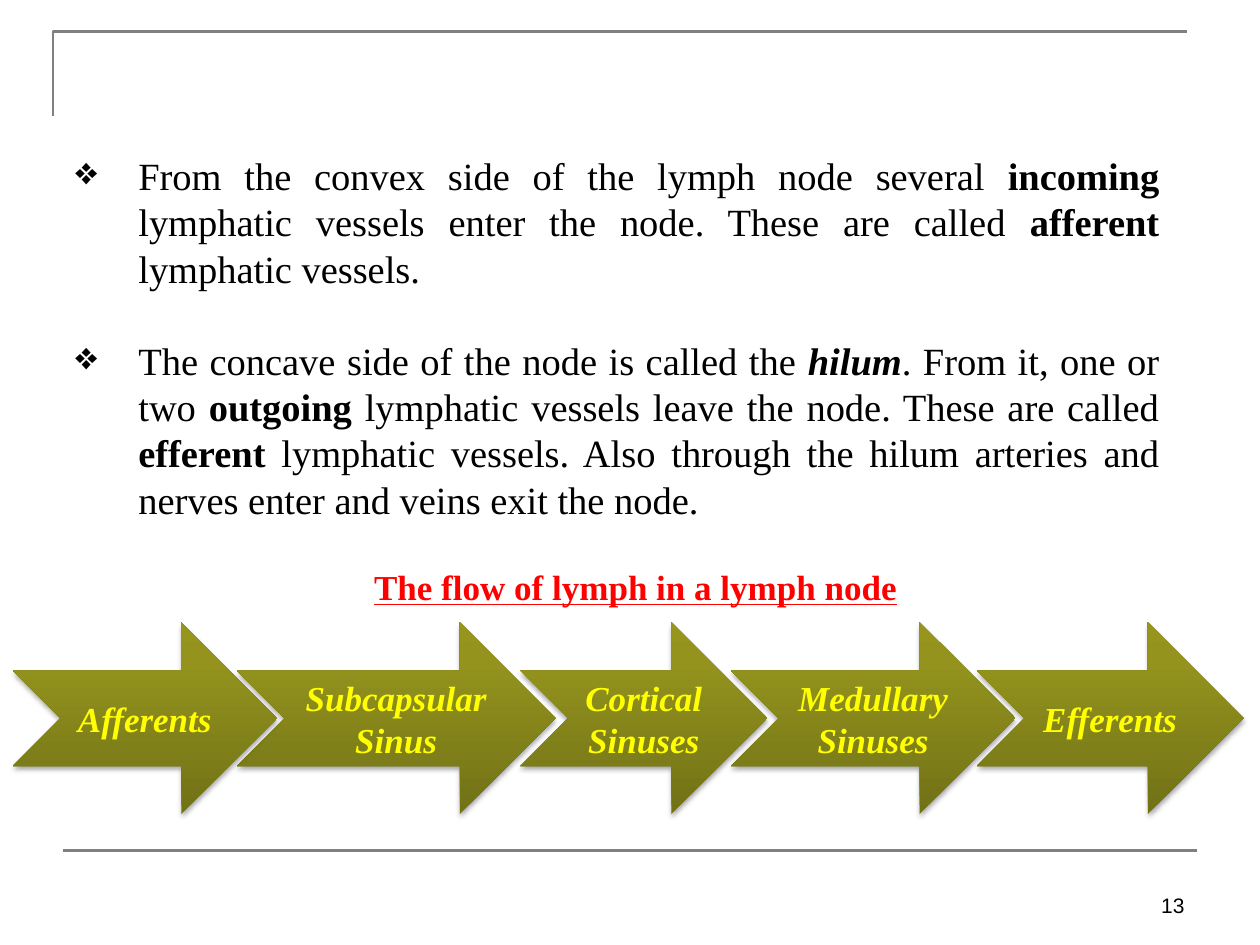
"""Build the slide on lymph vessels and the flow of lymph in a node."""
from copy import deepcopy
from lxml.etree import SubElement
from pptx import Presentation
from pptx.dml.color import RGBColor
from pptx.enum.shapes import MSO_CONNECTOR as Link, MSO_SHAPE as Form
from pptx.enum.text import MSO_ANCHOR as Anchor, PP_ALIGN as Align
from pptx.oxml.ns import qn
from pptx.util import Pt

SERIF = "Times New Roman"


def tint(color, code):
    color.rgb = RGBColor.from_string(code)


def style(para, size, code, name=SERIF, align=None):
    para.alignment = align
    font = para.font
    font.name, font.size = name, Pt(size)
    tint(font.color, code)
    return font


deck = Presentation()
deck.slide_width, deck.slide_height = Pt(720), Pt(540)
slide = deck.slides.add_slide(deck.slide_layouts[6])
shapes = slide.shapes

pen = shapes.build_freeform(Pt(30.24), Pt(66.24))
pen.add_line_segments([(Pt(30.24), Pt(18)), (Pt(678.24), Pt(18))], close=False)
frame = pen.convert_to_shape()
frame.fill.background()
frame.shadow.inherit = False
rule = shapes.add_connector(Link.STRAIGHT, Pt(36), Pt(486), Pt(684), Pt(486))
SubElement(rule._element.spPr, qn("a:effectLst"))
for edge in (frame, rule):
    tint(edge.line.color, "808080")
    edge.line.width = Pt(1.5)

steps = [
    ("Subcapsular Sinus", 135.36, 182.16),
    ("Afferents", 7.2, 151.2),
    ("Cortical Sinuses", 297.36, 141.12),
    ("Medullary Sinuses", 417.6, 162.72),
    ("Efferents", 558, 152.64),
]
for label, left, width in steps:
    arrow = shapes.add_shape(
        Form.NOTCHED_RIGHT_ARROW, Pt(left), Pt(355.68), Pt(width), Pt(109.44))
    arrow.line.fill.background()
    arrow.fill.gradient()
    arrow.fill.gradient_angle = 90
    props = arrow._element.spPr
    stops = props.find(".//" + qn("a:gsLst"))
    stops.insert(1, deepcopy(stops[0]))
    shades = [(0, "717117"), (0.8, "93931E"), (1, "96961C")]
    for stop, (place, code) in zip(arrow.fill.gradient_stops, shades):
        stop.position = place
        tint(stop.color, code)
    arrow.shadow.inherit = False
    shade = SubElement(
        props.find(qn("a:effectLst")), qn("a:outerShdw"), blurRad=str(Pt(3.1)),
        dist=str(Pt(1.8)), dir="5400000", rotWithShape="0")
    black = SubElement(shade, qn("a:srgbClr"), val="000000")
    SubElement(black, qn("a:alpha"), val="35000")
    text = arrow.text_frame
    text.word_wrap, text.vertical_anchor = True, Anchor.MIDDLE
    text.text = label
    font = style(text.paragraphs[0], 20, "FFFF00", align=Align.CENTER)
    font.bold = font.italic = True

points = [
    [("From the convex side of the lymph node several ", ""),
     ("incoming", "b"),
     (" lymphatic vessels enter the node. These are called ", ""),
     ("afferent", "b"),
     (" lymphatic vessels.", "")],
    [("The concave side of the node is called the ", ""),
     ("hilum", "bi"),
     (". From it, one or two ", ""),
     ("outgoing", "b"),
     (" lymphatic vessels leave the node. These are called ", ""),
     ("efferent", "b"),
     (" lymphatic vessels. Also through the hilum arteries and nerves"
      " enter and veins exit the node.", "")],
]
body = shapes.add_textbox(Pt(36), Pt(83.52), Pt(633.6), Pt(220.32)).text_frame
body.word_wrap = True
for rank, parts in enumerate(points):
    para = body.add_paragraph() if rank else body.paragraphs[0]
    style(para, 22, "000000", align=Align.JUSTIFY)
    para.space_before = Pt(26.4 * rank)
    look = para._p.get_or_add_pPr()
    look.set("marL", str(Pt(36)))
    look.set("indent", str(Pt(-36)))
    mark = SubElement(look, qn("a:buChar"), char="❖")
    look.remove(mark)
    look.insert_element_before(mark, "a:tabLst", "a:defRPr", "a:extLst")
    for words, marks in parts:
        run = para.add_run()
        run.text = words
        if "b" in marks:
            run.font.bold = True
        if "i" in marks:
            run.font.italic = True

page = shapes.add_textbox(Pt(516.24), Pt(491.76), Pt(167.76), Pt(36)).text_frame
page.word_wrap, page.vertical_anchor = True, Anchor.BOTTOM
page.text = "13"
style(page.paragraphs[0], 12, "000000", "Arial", Align.RIGHT)

head = shapes.add_textbox(Pt(206.64), Pt(319.68), Pt(322.56), Pt(31.68)).text_frame
head.word_wrap = False
head.text = "The flow of lymph in a lymph node"
font = style(head.paragraphs[0], 20, "FF0000")
font.bold = font.underline = True

deck.save("out.pptx")
